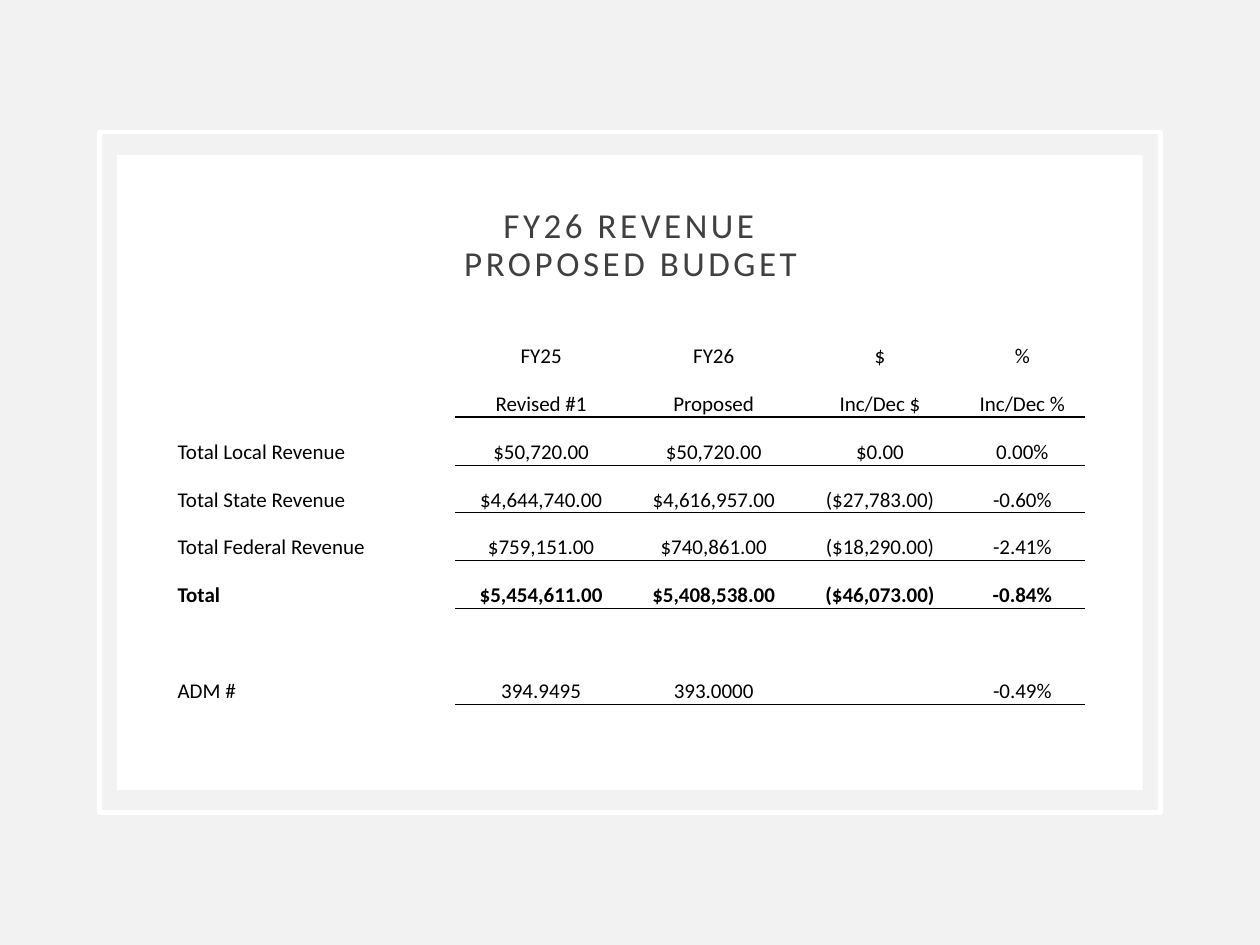
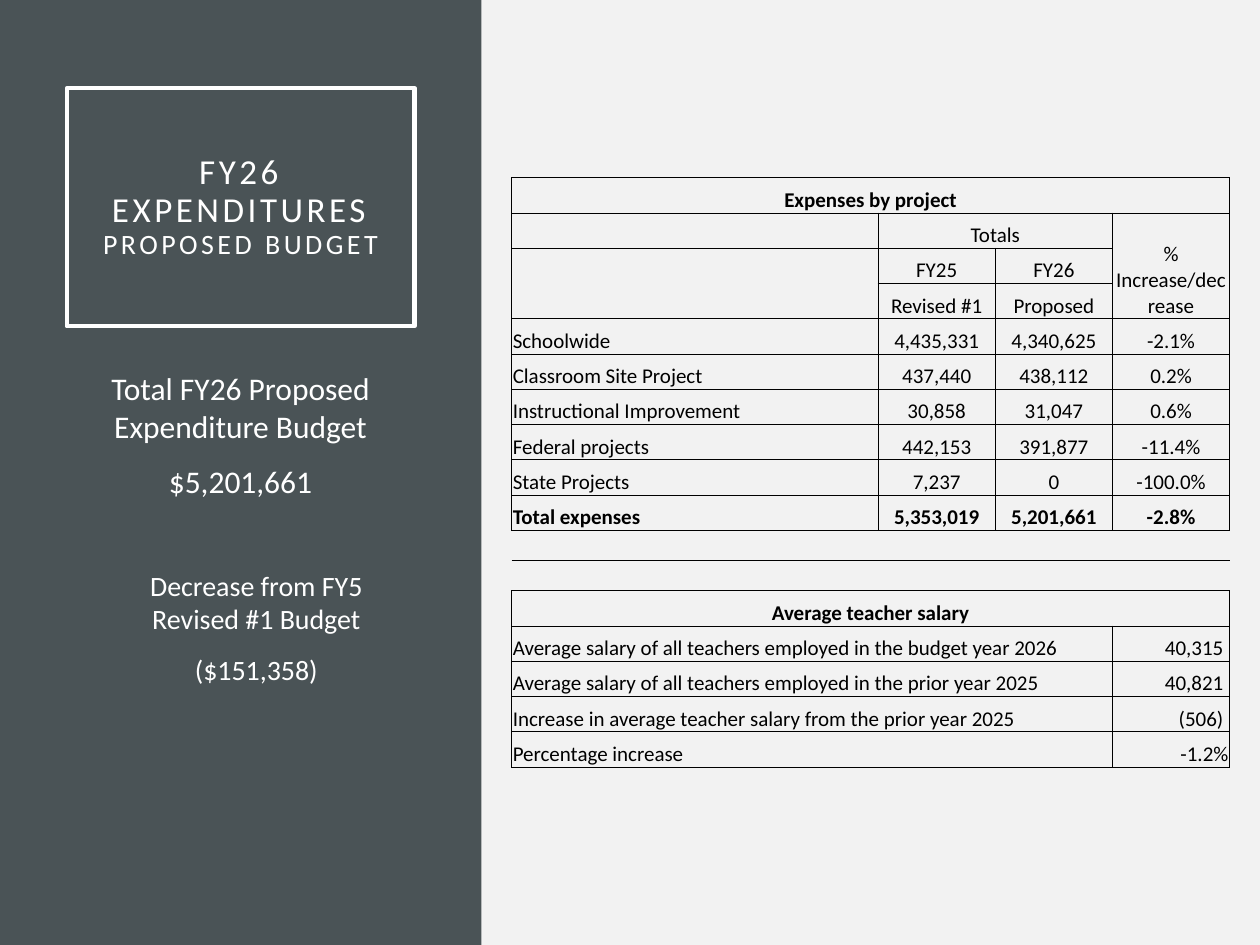
from lxml import etree
from pptx import Presentation
from pptx import util as u
from pptx.dml.color import RGBColor
from pptx.enum import shapes, text
from pptx.oxml.ns import qn

COLORS = {"page": "F2F2F2", "white": "FFFFFF", "slate": "4A5356",
          "heading": "404040", "ink": "000000"}
FONT = "Calibri"
NO_STYLE_NO_GRID = "{2D5ABB26-0587-4C30-8999-92F81FD0307C}"
LEFT, CENTER, RIGHT = text.PP_ALIGN.LEFT, text.PP_ALIGN.CENTER, text.PP_ALIGN.RIGHT

REVENUE = [
    ["", "FY25", "FY26", "$", "%"],
    ["", "Revised #1", "Proposed", "Inc/Dec $", "Inc/Dec %"],
    ["Total Local Revenue", "$50,720.00", "$50,720.00", "$0.00", "0.00%"],
    ["Total State Revenue", "$4,644,740.00", "$4,616,957.00", "($27,783.00)", "-0.60%"],
    ["Total Federal Revenue", "$759,151.00", "$740,861.00", "($18,290.00)", "-2.41%"],
    ["Total", "$5,454,611.00", "$5,408,538.00", "($46,073.00)", "-0.84%"],
    [""] * 5,
    ["ADM #", "394.9495", "393.0000", "", "-0.49%"],
]
EXPENSES = [
    ["Expenses by project", "", "", "", ""],
    ["", "", "Totals", "", "% Increase/decrease"],
    ["", "", "FY25", "FY26", ""],
    ["", "", "Revised #1", "Proposed", ""],
    ["Schoolwide", "", "4,435,331", "4,340,625", "-2.1%"],
    ["Classroom Site Project", "", "437,440", "438,112", "0.2%"],
    ["Instructional Improvement", "", "30,858", "31,047", "0.6%"],
    ["Federal projects", "", "442,153", "391,877", "-11.4%"],
    ["State Projects", "", "7,237", "0", "-100.0%"],
    ["Total expenses", "", "5,353,019", "5,201,661", "-2.8%"],
    [""] * 5,
    [""] * 5,
    ["Average teacher salary", "", "", "", ""],
    ["Average salary of all teachers employed in the budget year 2026", "", "", "", "40,315"],
    ["Average salary of all teachers employed in the prior year 2025", "", "", "", "40,821"],
    ["Increase in average teacher salary from the prior year 2025", "", "", "", "(506)"],
    ["Percentage increase", "", "", "", "-1.2%"],
]
PROJECT_ROWS = range(1, 10)
GAP_ROWS = {10: "T", 11: "B"}
SALARY_TITLE = 12
SALARY_ROWS = range(13, 17)


def rgb(name):
    """Return a palette colour."""
    return RGBColor.from_string(COLORS[name])


def place(shape, box):
    """Move a shape to a box of left, top, width and height in inches."""
    shape.left, shape.top, shape.width, shape.height = map(u.Inches, box)


def style(font, size, color, bold=False):
    """Apply the deck's font."""
    font.name, font.size, font.bold = FONT, u.Pt(size), bold
    font.color.rgb = rgb(color)


def outline(shape):
    """Give a shape the white frame line."""
    shape.line.color.rgb = rgb("white")
    shape.line.width = u.Pt(2.5)


def add_panel(slide, box, fill=None):
    """Add a filled rectangle, or an open frame when there is no fill."""
    panel = slide.shapes.add_shape(shapes.MSO_SHAPE.RECTANGLE, *map(u.Inches, box))
    panel.shadow.inherit = False
    if fill:
        panel.fill.solid()
        panel.fill.fore_color.rgb = rgb(fill)
        panel.line.fill.background()
    else:
        panel.fill.background()
        outline(panel)


def set_title(slide, box, lines, color):
    """Format the title from (wording, size) lines and bring it to the front."""
    title = slide.shapes.title
    place(title, box)
    slide.shapes._spTree.append(title._element)
    frame = title.text_frame
    frame.word_wrap, frame.auto_size = True, text.MSO_AUTO_SIZE.NONE
    frame.vertical_anchor = text.MSO_ANCHOR.MIDDLE
    frame.margin_left = frame.margin_right = u.Inches(0.2)
    frame.margin_top = frame.margin_bottom = u.Inches(0.2)
    heading = frame.paragraphs[0]
    heading.alignment, heading.line_spacing = CENTER, 0.9
    style(heading.font, lines[0][1], color)
    for index, (wording, size) in enumerate(lines):
        if index:
            heading.add_line_break()
        run = heading.add_run()
        run.text = wording
        run.font.size = u.Pt(size)
        run.font._rPr.set("spc", "200")
    return title


def set_borders(cell, sides):
    """Draw cell borders from a dict of side letter to width in points."""
    props = cell._tc.get_or_add_tcPr()
    for side in "LRTB":
        if side in sides:
            line = etree.SubElement(props, qn(f"a:ln{side}"), w=str(u.Pt(sides[side])))
            fill = etree.SubElement(line, qn("a:solidFill"))
            etree.SubElement(fill, qn("a:srgbClr"), val=COLORS["ink"])


def add_grid(slide, origin, columns, heights, rows, borders, align, bold):
    """Add a table whose borders, alignment and weight follow cell rules."""
    box = (*origin, sum(columns), sum(heights))
    table = slide.shapes.add_table(len(rows), len(columns), *map(u.Inches, box)).table
    table.first_row = table.horz_banding = False
    table._tbl.tblPr.find(qn("a:tableStyleId")).text = NO_STYLE_NO_GRID
    for column, width in zip(table.columns, columns):
        column.width = u.Inches(width)
    for r, (row, height) in enumerate(zip(rows, heights)):
        table.rows[r].height = u.Inches(height)
        for c, wording in enumerate(row):
            cell = table.cell(r, c)
            set_borders(cell, borders(r, c))
            cell.fill.background()
            cell.margin_left = cell.margin_right = cell.margin_top = u.Inches(0.01)
            cell.margin_bottom = 0
            cell.vertical_anchor = text.MSO_ANCHOR.BOTTOM
            entry = cell.text_frame.paragraphs[0]
            entry.text = wording
            entry.alignment = align(r, c)
            style(entry.font, 12, "ink", r in bold)
            if not wording:
                entry._p.get_or_add_endParaRPr().set("sz", "1200")
    return table


def revenue_borders(r, c):
    """Underline the figures, heavier below the headings."""
    if c == 0 or r in (0, 6):
        return {}
    return {"B": 1 if r == 1 else 0.5}


def expense_borders(r, c):
    """Outline each cell, leaving the joins of the heading blocks open."""
    if r in GAP_ROWS:
        return {GAP_ROWS[r]: 0.5}
    sides = set("LRTB")
    if r in PROJECT_ROWS and c < 2:
        sides.discard("RL"[c])
    first, last = [(1, 3), (1, 3), (2, 3), (2, 3), (1, 4)][c]
    if first <= r < last:
        sides.discard("B")
    if first < r <= last:
        sides.discard("T")
    return dict.fromkeys(sides, 0.5)


def expense_align(r, c):
    """Centre headings and project figures, right-align salaries."""
    if r in SALARY_ROWS:
        return RIGHT if c == 4 else LEFT
    return LEFT if c == 0 and r in PROJECT_ROWS else CENTER


def add_expense_table(slide, origin):
    """Add the project expenses and teacher salaries."""
    table = add_grid(slide, origin, [2.14, 0.77, 0.93, 0.93, 0.93],
                     [0.24 if r in GAP_ROWS else 0.28 for r in range(len(EXPENSES))],
                     EXPENSES, expense_borders, expense_align, (0, 9, SALARY_TITLE))
    for r in (0, SALARY_TITLE):
        table.cell(r, 0).merge(table.cell(r, 4))
    for r in SALARY_ROWS:
        table.cell(r, 0).merge(table.cell(r, 3))
    for r in SALARY_ROWS[:-1]:
        table.cell(r, 4).margin_right = u.Inches(0.05)
    table.cell(1, 2).merge(table.cell(1, 3))
    table.cell(1, 4).merge(table.cell(3, 4))


def add_summary(slide, box):
    """Add the expenditure total and its change."""
    frame = slide.shapes.add_textbox(*map(u.Inches, box)).text_frame
    frame.word_wrap = True
    facts = [("Total FY26 Proposed Expenditure Budget", 18, 10, 0),
             ("$5,201,661", 18, 10, 0),
             ("Decrease from FY5 Revised #1 Budget", 16, 39, 0.25),
             ("($151,358)", 16, 10, 0.25)]
    for index, (wording, size, before, indent) in enumerate(facts):
        fact = frame.add_paragraph() if index else frame.paragraphs[0]
        fact.text = wording
        fact.alignment, fact.space_before = CENTER, u.Pt(before)
        fact._p.get_or_add_pPr().set("marL", str(u.Inches(indent)))
        style(fact.font, size, "white")


def new_slide(deck):
    """Add a title-only slide on the grey page."""
    slide = deck.slides.add_slide(deck.slide_layouts[5])
    slide.background.fill.solid()
    slide.background.fill.fore_color.rgb = rgb("page")
    return slide


def build_revenue(deck):
    """Build the framed revenue slide."""
    slide = new_slide(deck)
    add_panel(slide, (0, 0, 10, 7.5), "page")
    add_panel(slide, (0.93, 1.23, 8.14, 5.04), "white")
    set_title(slide, (1.47, 1.45, 7.07, 1.01),
              [("FY26 REVENUE", 20), ("PROPOSED BUDGET", 20)], "heading")
    add_panel(slide, (0.79, 1.05, 8.42, 5.4))
    add_grid(slide, (1.4, 2.55), [2.21, 1.37, 1.37, 1.27, 0.99], [0.38] * len(REVENUE),
             REVENUE, revenue_borders, lambda r, c: CENTER if c else LEFT, (5,))


def build_expenditures(deck):
    """Build the expenditure slide with its dark side band."""
    slide = new_slide(deck)
    add_panel(slide, (0, 0, 3.82, 7.5), "slate")
    title = set_title(slide, (0.53, 0.7, 2.76, 1.89),
                      [("FY26 EXPENDITURES", 20), ("PROPOSED BUDGET", 16)], "white")
    outline(title)
    add_summary(slide, (0.53, 2.88, 2.76, 3.74))
    add_expense_table(slide, (4.06, 1.41))


def main():
    """Build and save the deck."""
    deck = Presentation()
    deck.slide_width, deck.slide_height = u.Inches(10), u.Inches(7.5)
    build_revenue(deck)
    build_expenditures(deck)
    deck.save("out.pptx")


if __name__ == "__main__":
    main()
